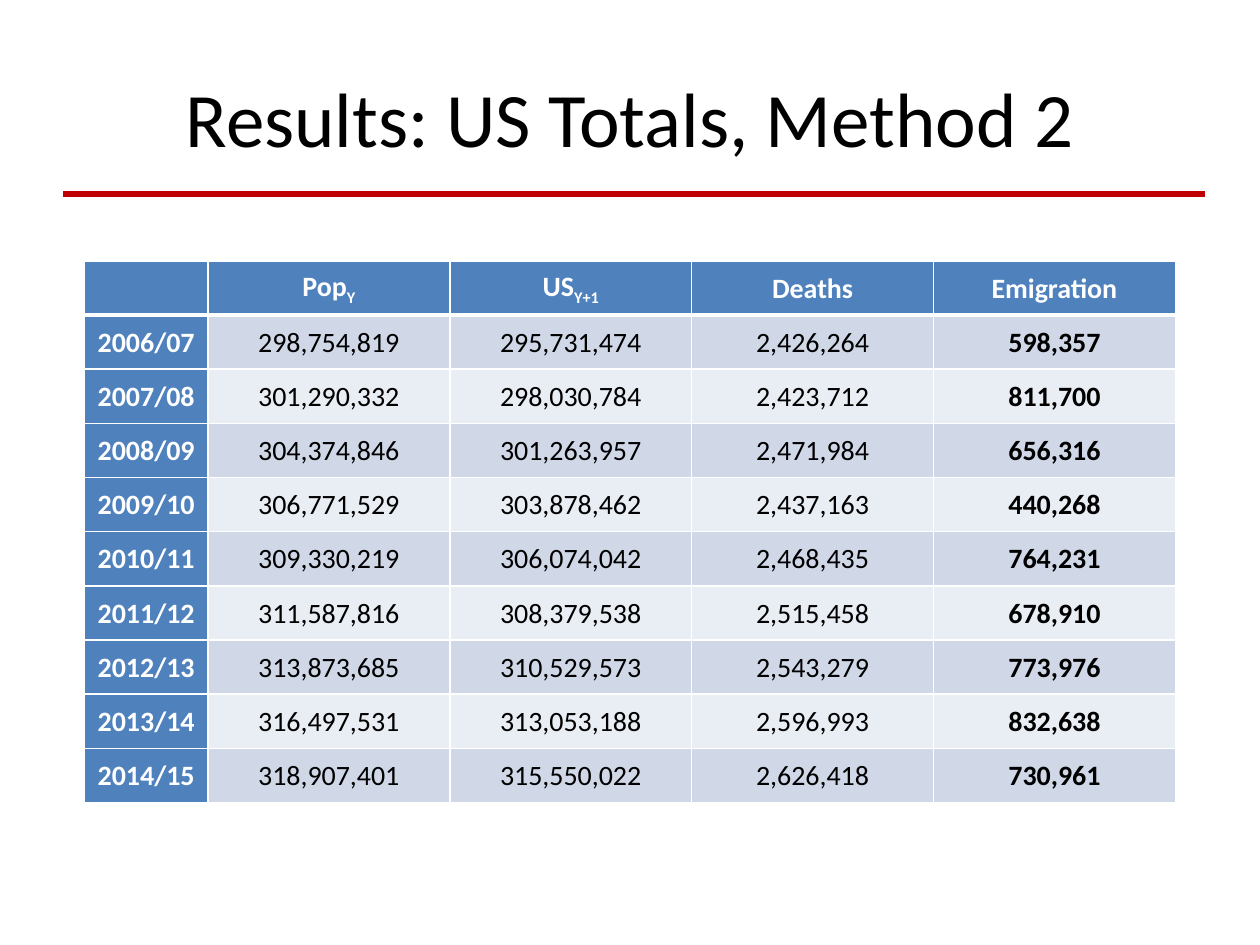
from dataclasses import dataclass

from lxml import etree
from pptx import Presentation
from pptx.dml.color import RGBColor
from pptx.enum import shapes, text
from pptx.oxml import ns
from pptx.util import Inches, Pt


@dataclass(frozen=True)
class Theme:
    font: str = "Calibri"
    title_size: int = 44
    cell_size: int = 16
    black: str = "000000"
    white: str = "FFFFFF"
    rule: str = "C00000"
    header: str = "4F81BD"
    bands: tuple = ("D0D8E8", "E9EDF4")
    rule_width: int = 3
    border: int = 1
    header_border: int = 3


THEME = Theme()
HEADERS = [("",), ("Pop", "Y"), ("US", "Y+1"), ("Deaths",), ("Emigration",)]
RESULTS = [
    ("2006/07", "298,754,819", "295,731,474", "2,426,264", "598,357"),
    ("2007/08", "301,290,332", "298,030,784", "2,423,712", "811,700"),
    ("2008/09", "304,374,846", "301,263,957", "2,471,984", "656,316"),
    ("2009/10", "306,771,529", "303,878,462", "2,437,163", "440,268"),
    ("2010/11", "309,330,219", "306,074,042", "2,468,435", "764,231"),
    ("2011/12", "311,587,816", "308,379,538", "2,515,458", "678,910"),
    ("2012/13", "313,873,685", "310,529,573", "2,543,279", "773,976"),
    ("2013/14", "316,497,531", "313,053,188", "2,596,993", "832,638"),
    ("2014/15", "318,907,401", "315,550,022", "2,626,418", "730,961"),
]
COLUMN_WIDTHS = [0.98] + [1.92] * 4
ROW_HEIGHT = 0.43


def add_run(p, content, size, color, bold=False, subscript=False):
    r = p.add_run()
    r.text = content
    r.font.name = THEME.font
    r.font.size = Pt(size)
    r.font.bold = bold
    r.font.color.rgb = RGBColor.from_string(color)
    if subscript:
        r.font._element.set("baseline", "-25000")


def add_title(s, content):
    tf = s.shapes.add_textbox(Inches(0.5), Inches(0.3), Inches(9), Inches(1.25)).text_frame
    tf.word_wrap = True
    tf.vertical_anchor = text.MSO_ANCHOR.MIDDLE
    p = tf.paragraphs[0]
    p.alignment = text.PP_ALIGN.CENTER
    add_run(p, content, THEME.title_size, THEME.black)


def add_rule(s):
    y = Inches(1.54)
    line = s.shapes.add_connector(
        shapes.MSO_CONNECTOR.STRAIGHT, Inches(0.5), y, Inches(9.56), y)
    line.line.color.rgb = RGBColor.from_string(THEME.rule)
    line.line.width = Pt(THEME.rule_width)
    etree.SubElement(line._element.spPr, ns.qn("a:effectLst"))


def set_borders(cell, top, bottom):
    tc_pr = cell._tc.get_or_add_tcPr()
    widths = {"L": THEME.border, "R": THEME.border, "T": top, "B": bottom}
    for side, width in widths.items():
        ln = etree.SubElement(tc_pr, ns.qn(f"a:ln{side}"), w=str(Pt(width)))
        fill = etree.SubElement(ln, ns.qn("a:solidFill"))
        etree.SubElement(fill, ns.qn("a:srgbClr"), val=THEME.white)


def fill_cell(cell, parts, row, column):
    heading = row == 0 or column == 0
    set_borders(
        cell,
        THEME.header_border if row == 1 else THEME.border,
        THEME.header_border if row == 0 else THEME.border)
    cell.fill.solid()
    cell.fill.fore_color.rgb = RGBColor.from_string(
        THEME.header if heading else THEME.bands[(row - 1) % 2])
    cell.margin_left = cell.margin_right = cell.margin_top = Inches(0.01)
    cell.margin_bottom = 0
    cell.vertical_anchor = text.MSO_ANCHOR.MIDDLE
    p = cell.text_frame.paragraphs[0]
    p.alignment = text.PP_ALIGN.CENTER
    p.font.size = Pt(THEME.cell_size)
    bold = heading or column == len(COLUMN_WIDTHS) - 1
    color = THEME.white if heading else THEME.black
    for i, part in enumerate(parts):
        if part:
            add_run(p, part, THEME.cell_size, color, bold, subscript=i > 0)


def add_results_table(s):
    rows = [HEADERS] + [[(value,) for value in result] for result in RESULTS]
    table = s.shapes.add_table(
        len(rows), len(COLUMN_WIDTHS), Inches(0.67), Inches(2.07),
        Inches(sum(COLUMN_WIDTHS)), Inches(ROW_HEIGHT * len(rows))).table
    for column, width in zip(table.columns, COLUMN_WIDTHS):
        column.width = Inches(width)
    for i, row in enumerate(rows):
        table.rows[i].height = Inches(ROW_HEIGHT)
        for j, parts in enumerate(row):
            fill_cell(table.cell(i, j), parts, i, j)


def main():
    prs = Presentation()
    prs.slide_width, prs.slide_height = Inches(10), Inches(7.5)
    s = prs.slides.add_slide(prs.slide_layouts[6])
    add_rule(s)
    add_title(s, "Results: US Totals, Method 2")
    add_results_table(s)
    prs.save("out.pptx")


if __name__ == "__main__":
    main()
